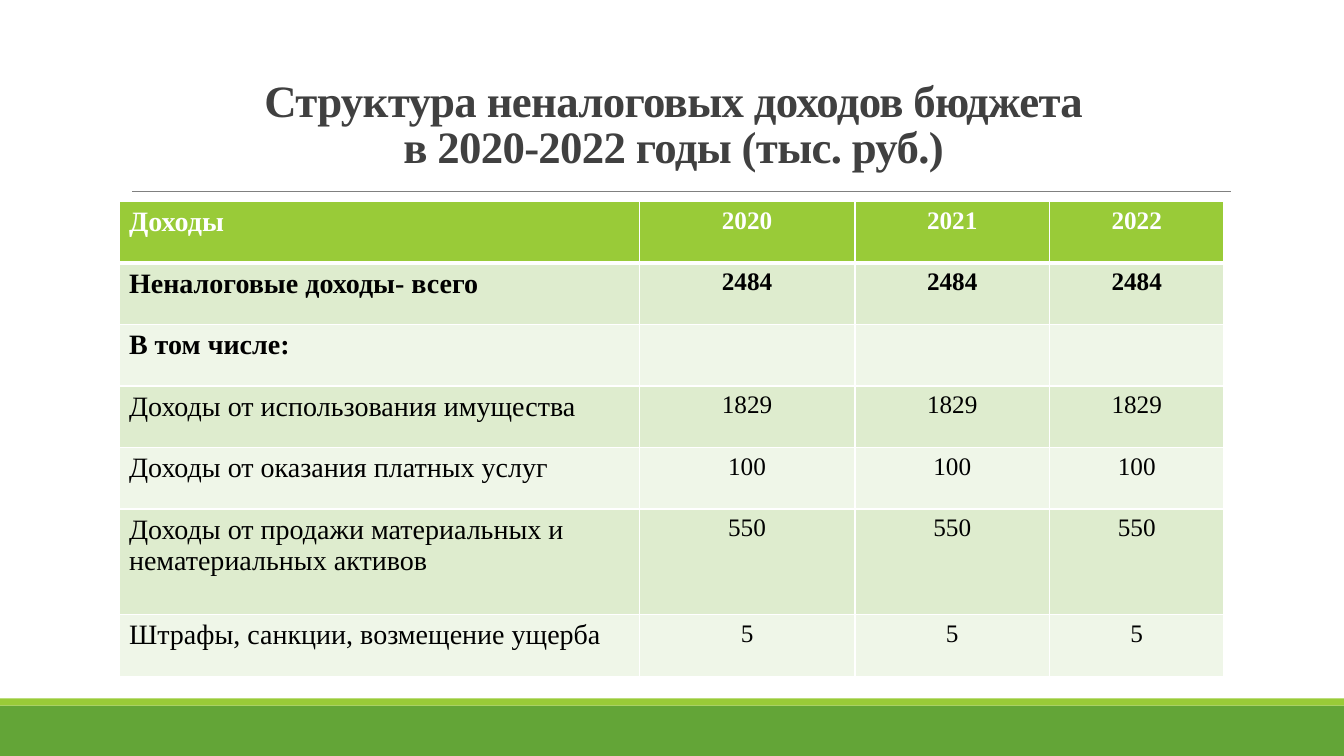
from lxml import etree
from pptx import Presentation
from pptx import util as u
from pptx.dml.color import RGBColor
from pptx.enum import shapes, text
from pptx.oxml import ns

COLOURS = {
    "band": "63A537", "accent": "99CB38", "rule": "808080", "title": "404040",
    "white": "FFFFFF", "black": "000000", "odd": "DEECCE", "even": "EFF6E8",
}
TITLE_LINES = ["Структура неналоговых доходов бюджета", "в 2020-2022 годы (тыс. руб.)"]
INCOME_ROWS = [
    ("Доходы", "2020", "2021", "2022"),
    ("Неналоговые доходы- всего", "2484", "2484", "2484"),
    ("В том числе:", "", "", ""),
    ("Доходы от использования имущества", "1829", "1829", "1829"),
    ("Доходы от оказания платных услуг", "100", "100", "100"),
    ("Доходы от продажи материальных и нематериальных активов", "550", "550", "550"),
    ("Штрафы, санкции, возмещение ущерба", "5", "5", "5"),
]
BOLD_ROWS = 3
COLUMN_WIDTHS = [5.16, 2.14, 1.93, 1.73]
ROW_HEIGHTS = [0.61] * 5 + [1.05, 0.61]


def colour(key):
    return RGBColor.from_string(COLOURS[key])


class BudgetSlide:
    font_name = "Times New Roman"

    def __init__(self, slide):
        self.slide = slide

    def run(self, paragraph, wording, size, key, bold):
        run = paragraph.add_run()
        run.text = wording
        run.font.name = self.font_name
        run.font.size = u.Pt(size)
        run.font.bold = bold
        run.font.color.rgb = colour(key)
        return run

    def band(self, top, height, key):
        band = self.slide.shapes.add_shape(
            shapes.MSO_SHAPE.RECTANGLE, 0, u.Inches(top), u.Inches(13.33), u.Inches(height))
        band.shadow.inherit = False
        band.fill.solid()
        band.fill.fore_color.rgb = colour(key)
        band.line.fill.background()

    def rule(self, left, right, top):
        rule = self.slide.shapes.add_connector(
            shapes.MSO_CONNECTOR.STRAIGHT,
            u.Inches(left), u.Inches(top), u.Inches(right), u.Inches(top))
        rule.line.color.rgb = colour("rule")
        rule.line.width = u.Pt(0.5)
        etree.SubElement(rule._element.spPr, ns.qn("a:effectLst"))

    def title(self, lines):
        title = self.slide.shapes.title
        title.left, title.top = u.Inches(1.18), u.Inches(0.17)
        title.width, title.height = u.Inches(11), u.Inches(1.59)
        frame = title.text_frame
        frame.word_wrap = True
        frame.auto_size = text.MSO_AUTO_SIZE.NONE
        frame.vertical_anchor = text.MSO_ANCHOR.BOTTOM
        heading = frame.paragraphs[0]
        heading.alignment = text.PP_ALIGN.CENTER
        heading.line_spacing = 0.85
        for number, line in enumerate(lines):
            if number:
                heading.add_line_break()
            run = self.run(heading, line, 32, "title", True)
            run._r.get_or_add_rPr().set("spc", "-50")

    def borders(self, cell, **widths):
        """Draw white cell borders; widths are points for L, R, T and B."""
        properties = cell._tc.get_or_add_tcPr()
        for side in "LRTB":
            border = etree.SubElement(
                properties, ns.qn(f"a:ln{side}"), w=str(u.Pt(widths.get(side, 1))))
            fill = etree.SubElement(border, ns.qn("a:solidFill"))
            etree.SubElement(fill, ns.qn("a:srgbClr"), val=COLOURS["white"])

    def table(self, rows):
        incomes = self.slide.shapes.add_table(
            len(rows), len(COLUMN_WIDTHS), u.Inches(1.18), u.Inches(2),
            u.Inches(sum(COLUMN_WIDTHS)), u.Inches(sum(ROW_HEIGHTS))).table
        for column, width in zip(incomes.columns, COLUMN_WIDTHS):
            column.width = u.Inches(width)
        for row, height in zip(incomes.rows, ROW_HEIGHTS):
            row.height = u.Inches(height)
        for r, values in enumerate(rows):
            background = "accent" if r == 0 else "odd" if r % 2 else "even"
            for c, value in enumerate(values):
                cell = incomes.cell(r, c)
                self.borders(cell, T=3 if r == 1 else 1, B=3 if r == 0 else 1)
                cell.fill.solid()
                cell.fill.fore_color.rgb = colour(background)
                paragraph = cell.text_frame.paragraphs[0]
                if c:
                    paragraph.alignment = text.PP_ALIGN.CENTER
                if value:
                    self.run(paragraph, value, 18 if c else 20,
                             "black" if r else "white", r < BOLD_ROWS)


def main():
    deck = Presentation()
    deck.slide_width, deck.slide_height = u.Inches(13.33), u.Inches(7.5)
    budget = BudgetSlide(deck.slides.add_slide(deck.slide_layouts[5]))
    budget.band(7, 0.5, "band")
    budget.band(6.93, 0.07, "accent")
    budget.rule(1.31, 12.21, 1.9)
    budget.title(TITLE_LINES)
    budget.table(INCOME_ROWS)
    deck.save("out.pptx")


if __name__ == "__main__":
    main()
